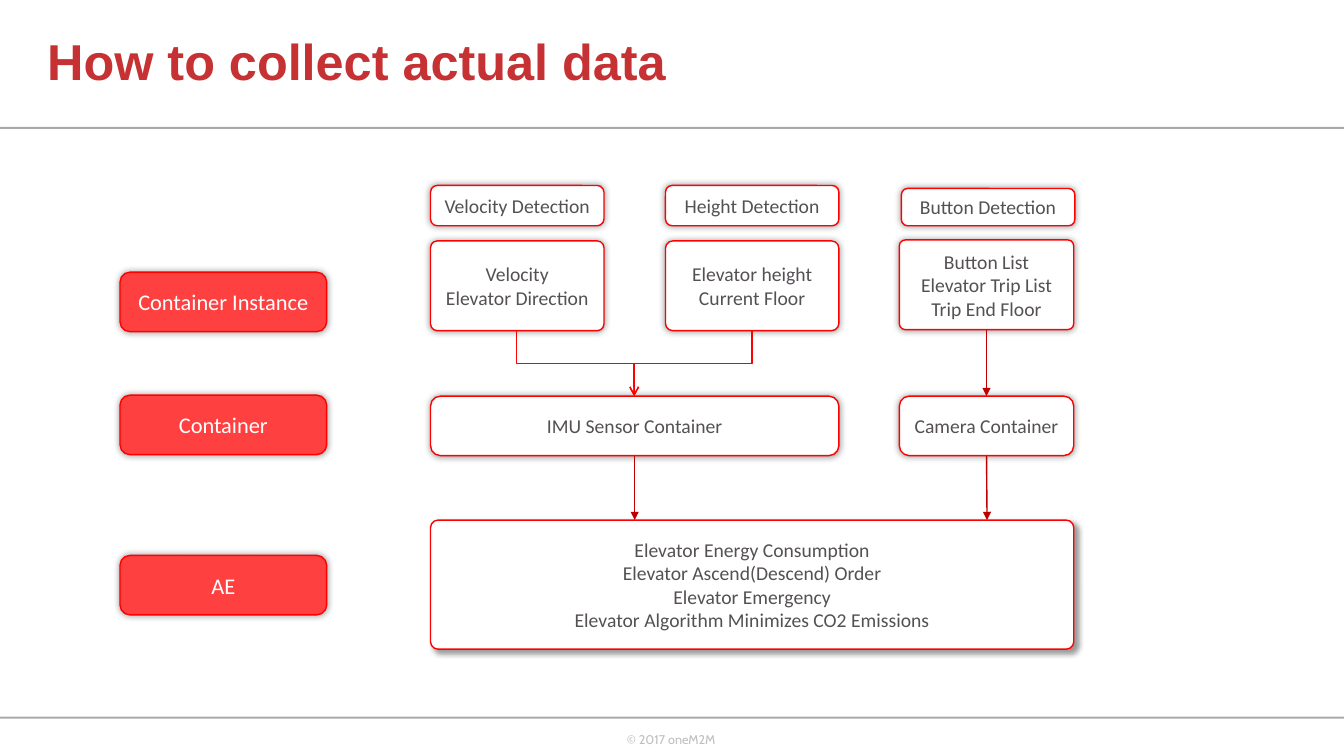
from lxml import etree
from pptx import Presentation
from pptx.dml.color import RGBColor
from pptx.enum.shapes import MSO_CONNECTOR as LINK, MSO_SHAPE as SHAPE
from pptx.enum.text import MSO_ANCHOR as ANCHOR, PP_ALIGN as ALIGN
from pptx.oxml.ns import qn
from pptx.util import Inches, Pt

WHITE = RGBColor(0xFF, 0xFF, 0xFF)
RED = RGBColor(0xFF, 0x00, 0x00)
DARK_RED = RGBColor(0xC0, 0x00, 0x00)
LABEL_RED = RGBColor(0xFF, 0x40, 0x40)
TITLE_RED = RGBColor(0xC6, 0x31, 0x33)
TEXT_GREY = RGBColor(0x54, 0x50, 0x54)
RULE_GREY = RGBColor(0xA7, 0xA9, 0xAC)
FOOTER_GREY = RGBColor(0xBF, 0xBF, 0xBF)


def write(shape, text, size=14, font="Calibri", color=TEXT_GREY, bold=False,
          align=ALIGN.CENTER, anchor=ANCHOR.MIDDLE, wrap=True, spacing=None):
    frame = shape.text_frame
    frame.word_wrap = wrap
    frame.vertical_anchor = anchor
    frame.text = text
    for paragraph in frame.paragraphs:
        paragraph.alignment = align
        paragraph.line_spacing = spacing
        paragraph.font.size = Pt(size)
        paragraph.font.name = font
        paragraph.font.bold = bold
        paragraph.font.color.rgb = color


def add_card(left, top, width, height, text, fill=WHITE, corner=0.167,
             blur=5, distance=0, angle=0, **text_format):
    card = slide.shapes.add_shape(SHAPE.ROUNDED_RECTANGLE, Inches(left), Inches(top),
                                  Inches(width), Inches(height))
    card.adjustments[0] = corner
    card.fill.solid()
    card.fill.fore_color.rgb = fill
    card.line.color.rgb = RED
    card.line.width = Pt(1)
    card.shadow.inherit = False
    effects = card.element.spPr.find(qn("a:effectLst"))
    shadow = etree.SubElement(effects, qn("a:outerShdw"), blurRad=str(Pt(blur)),
                              dist=str(Pt(distance)), dir=str(angle * 60000),
                              algn="ctr", rotWithShape="0")
    black = etree.SubElement(shadow, qn("a:srgbClr"), val="000000")
    etree.SubElement(black, qn("a:alpha"), val="40000")
    write(card, text, **text_format)
    return card


prs = Presentation()
prs.slide_width, prs.slide_height = Inches(13.33), Inches(7.5)
slide = prs.slides.add_slide(prs.slide_layouts[6])

# Header and footer rules
for top in (1.26, 7.11):
    rule = slide.shapes.add_shape(SHAPE.RECTANGLE, 0, Inches(top), Inches(13.33), Inches(0.02))
    rule.shadow.inherit = False
    rule.fill.solid()
    rule.fill.fore_color.rgb = RULE_GREY
    rule.line.fill.background()

# Title and copyright line
title = slide.shapes.add_textbox(Inches(0.37), 0, Inches(11.24), Inches(1.28))
write(title, "How to collect actual data", size=36, font="Arial", color=TITLE_RED,
      bold=True, align=ALIGN.LEFT, spacing=0.9)
footer = slide.shapes.add_textbox(Inches(6.12), Inches(7.21), Inches(1.1), Inches(0.4))
write(footer, "© 2017 oneM2M", size=9, font="Cabin", color=FOOTER_GREY,
      align=ALIGN.LEFT, anchor=ANCHOR.TOP, wrap=False)

# Layer labels on the left
for top, layer in ((2.7, "Container Instance"), (3.92, "Container"), (5.51, "AE")):
    add_card(1.19, top, 2.05, 0.59, layer, fill=LABEL_RED, size=16, color=WHITE)

# Detection headings
for left, top, height, detection in ((4.27, 1.84, 0.4, "Velocity Detection"),
                                     (6.6, 1.84, 0.4, "Height Detection"),
                                     (8.94, 1.87, 0.37, "Button Detection")):
    add_card(left, top, 1.72, height, detection)

# Container instances, containers and application entity
add_card(4.27, 2.39, 1.72, 0.89, "Velocity\nElevator Direction", corner=0.075)
add_card(6.6, 2.39, 1.72, 0.89, "Elevator height\nCurrent Floor", corner=0.082)
buttons = add_card(8.92, 2.38, 1.73, 0.89,
                   "Button List\nElevator Trip List\nTrip End Floor", corner=0.067)
imu = add_card(4.27, 3.93, 4.05, 0.59, "IMU Sensor Container")
camera = add_card(8.92, 3.93, 1.73, 0.59, "Camera Container")
add_card(4.27, 5.16, 6.38, 1.28,
         "Elevator Energy Consumption\nElevator Ascend(Descend) Order\n"
         "Elevator Emergency\nElevator Algorithm Minimizes CO2 Emissions",
         corner=0.058, blur=4, distance=3, angle=45)

# Arrows: elbows are laid out sideways, then turned to run downwards
arrows = (
    (LINK.ELBOW, 6.03, 3.02, 5.38, 4.19, 270, RED, "arrow", None, None),
    (LINK.ELBOW, 6.55, 3.02, 7.2, 4.19, 90, RED, "arrow", None, None),
    (LINK.STRAIGHT, 9.79, 3.28, 9.79, 3.93, 0, DARK_RED, "triangle", buttons, camera),
    (LINK.STRAIGHT, 9.79, 4.52, 9.79, 5.16, 0, DARK_RED, "triangle", camera, None),
    (LINK.STRAIGHT, 6.295, 4.52, 6.295, 5.16, 0, DARK_RED, "triangle", imu, None),
)
for kind, x1, y1, x2, y2, turn, color, head, source, target in arrows:
    arrow = slide.shapes.add_connector(kind, Inches(x1), Inches(y1), Inches(x2), Inches(y2))
    if source:
        arrow.begin_connect(source, 2)
    if target:
        arrow.end_connect(target, 0)
    arrow.line.color.rgb = color
    arrow.line.width = Pt(1)
    properties = arrow.element.spPr
    if turn:
        properties.find(qn("a:xfrm")).set("rot", str(turn * 60000))
    etree.SubElement(properties.find(qn("a:ln")), qn("a:tailEnd"), type=head)
    etree.SubElement(properties, qn("a:effectLst"))

prs.save("out.pptx")
